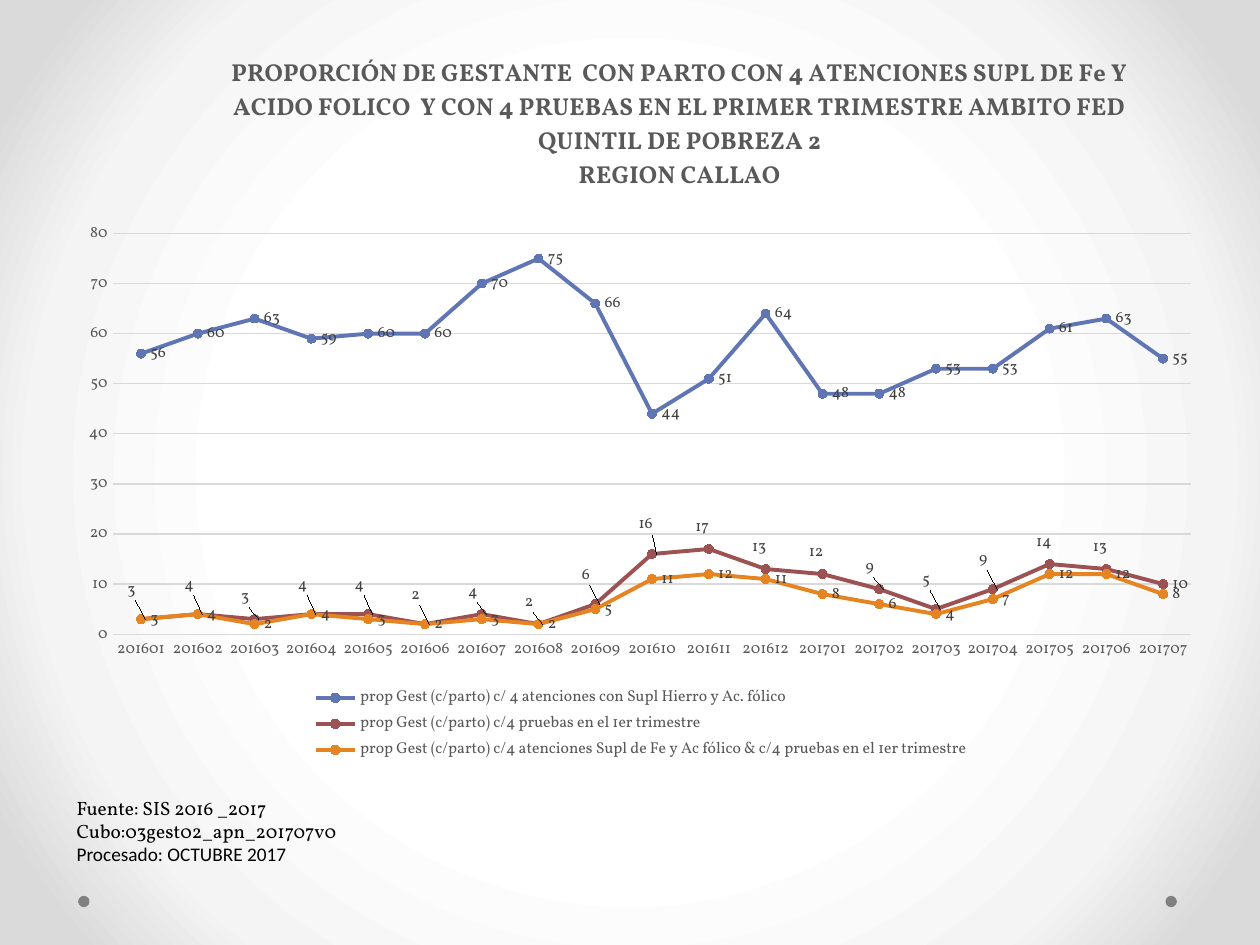
from lxml.etree import SubElement
from pptx import Presentation
from pptx.chart.data import CategoryChartData
from pptx.dml.color import RGBColor
from pptx.enum.chart import (XL_CHART_TYPE, XL_LABEL_POSITION, XL_LEGEND_POSITION,
                             XL_MARKER_STYLE, XL_TICK_MARK)
from pptx.enum.shapes import MSO_SHAPE
from pptx.oxml import parse_xml
from pptx.oxml.ns import nsdecls, qn
from pptx.util import Inches, Pt

TITLE = ("PROPORCIÓN DE GESTANTE  CON PARTO CON 4 ATENCIONES SUPL DE Fe Y "
         "ACIDO FOLICO  Y CON 4 PRUEBAS EN EL PRIMER TRIMESTRE AMBITO FED "
         "QUINTIL DE POBREZA 2\nREGION CALLAO")
MONTHS = [f"{year}{month:02}" for year, last in ((2016, 12), (2017, 7))
          for month in range(1, last + 1)]
SERIES = [
    ("prop Gest (c/parto) c/ 4 atenciones con Supl Hierro y Ac. fólico", "6076B4",
     [56, 60, 63, 59, 60, 60, 70, 75, 66, 44, 51, 64, 48, 48, 53, 53, 61, 63, 55]),
    ("prop Gest (c/parto) c/4 pruebas en el 1er trimestre", "9C5252",
     [3, 4, 3, 4, 4, 2, 4, 2, 6, 16, 17, 13, 12, 9, 5, 9, 14, 13, 10]),
    ("prop Gest (c/parto) c/4 atenciones Supl de Fe y Ac fólico & c/4 pruebas en el 1er trimestre",
     "E68422", [3, 4, 2, 4, 3, 2, 3, 2, 5, 11, 12, 11, 8, 6, 4, 7, 12, 12, 8]),
]
LABEL_RISES = [0.04, 0.04, 0.03, 0.04, 0.04, 0.04, 0.03, 0.03, 0.04,
               0.04, 0.03, 0.03, 0.03, 0.03, 0.04, 0.04, 0.03, 0.03]
SOURCE_LINES = [("Fuente: SIS 2016 _2017", "Vollkorn"),
                ("Cubo:03gest02_apn_201707v0", "Vollkorn"),
                ("Procesado: OCTUBRE 2017", "Calibri")]


def color(value):
    return RGBColor.from_string(value)


def manual_layout(**settings):
    layout = parse_xml(f'<c:layout {nsdecls("c")}/>')
    manual = SubElement(layout, qn("c:manualLayout"))
    for name, value in settings.items():
        SubElement(manual, qn(f"c:{name}")).set("val", str(value))
    return layout


class SlideBuilder:
    """Holds the style and the current slide, placing elements by percent of its size."""

    font_name = "Vollkorn"
    text, label, rule, dot_color = "595959", "404040", "D9D9D9", "808080"

    def __init__(self, presentation):
        self.width, self.height = presentation.slide_width, presentation.slide_height
        self.slide = presentation.slides.add_slide(presentation.slide_layouts[6])

    def place(self, left, top, width, height):
        return (round(left * self.width / 100), round(top * self.height / 100),
                round(width * self.width / 100), round(height * self.height / 100))

    def style(self, font, size, value, name=None, bold=False):
        font.name, font.size, font.bold = name or self.font_name, Pt(size), bold
        font.color.rgb = color(value)

    def background(self, stops):
        fill = self.slide.background.fill
        fill.solid()
        fill.fore_color.rgb = color(stops[0][1])
        solid = self.slide.element.find(".//" + qn("a:solidFill"))
        marks = "".join(f'<a:gs pos="{share * 1000}"><a:srgbClr val="{value}"/></a:gs>'
                        for share, value in stops)
        gradient = parse_xml(
            f'<a:gradFill {nsdecls("a")} rotWithShape="1"><a:gsLst>{marks}</a:gsLst>'
            '<a:path path="circle"><a:fillToRect l="50000" t="50000" r="50000" b="50000"/>'
            '</a:path></a:gradFill>')
        solid.getparent().replace(solid, gradient)

    def dot(self, left, top, diameter):
        x, y, size, _ = self.place(left, top, diameter, diameter)
        shape = self.slide.shapes.add_shape(MSO_SHAPE.OVAL, x, y, size, size)
        shape.shadow.inherit = False
        shape.fill.solid()
        shape.fill.fore_color.rgb = color(self.dot_color)
        shape.line.fill.background()

    def text_box(self, place, lines):
        frame = self.slide.shapes.add_textbox(*self.place(*place)).text_frame
        frame.word_wrap = True
        frame.text = "\n".join(text for text, _ in lines)
        for paragraph, (_, name) in zip(frame.paragraphs, lines):
            self.style(paragraph.font, 11, "000000", name)

    def line_chart(self, place, title, categories, series):
        data = CategoryChartData(number_format="0")
        data.categories = categories
        for name, _, values in series:
            data.add_series(name, values)
        chart = self.slide.shapes.add_chart(
            XL_CHART_TYPE.LINE_MARKERS, *self.place(*place), data).chart
        self.style(chart.font, 10, "000000")
        self.chart_title(chart, title)
        self.axes(chart)
        chart.has_legend = True
        chart.legend.position = XL_LEGEND_POSITION.BOTTOM
        chart.legend.include_in_layout = False
        self.style(chart.legend.font, 9, self.text)
        plot = chart.plots[0]
        plot.vary_by_categories = False
        for line, (_, value, _) in zip(plot.series, series):
            self.series_line(line, value)
        area = chart.element.find(".//" + qn("c:plotArea"))
        for old in area.findall(qn("c:layout")):
            area.remove(old)
        area.insert(0, manual_layout(layoutTarget="inner", xMode="edge", yMode="edge",
                                     x=0.04, y=0.27, w=0.94, h=0.55))
        return chart

    def chart_title(self, chart, title):
        chart.has_title = True
        frame = chart.chart_title.text_frame
        frame.text = title
        for paragraph in frame.paragraphs:
            self.style(paragraph.font, 14, self.text, bold=True)
        element = chart.element.find(".//" + qn("c:title"))
        for old in element.findall(qn("c:layout")):
            element.remove(old)
        element.find(qn("c:tx")).addnext(
            manual_layout(xMode="edge", yMode="edge", x=0.14, y=0.02))

    def axes(self, chart):
        for axis in (chart.category_axis, chart.value_axis):
            axis.major_tick_mark = axis.minor_tick_mark = XL_TICK_MARK.NONE
            self.style(axis.tick_labels.font, 9, self.text)
        value_axis = chart.value_axis
        value_axis.minimum_scale, value_axis.maximum_scale, value_axis.major_unit = 0, 80, 10
        value_axis.tick_labels.number_format = "0"
        value_axis.tick_labels.number_format_is_linked = False
        value_axis.format.line.fill.background()
        for line in (chart.category_axis.format.line, value_axis.major_gridlines.format.line):
            line.color.rgb, line.width = color(self.rule), Pt(0.75)

    def series_line(self, series, value):
        series.smooth = False
        series.format.line.color.rgb, series.format.line.width = color(value), Pt(2.25)
        marker = series.marker
        marker.style, marker.size = XL_MARKER_STYLE.CIRCLE, 5
        marker.format.fill.solid()
        marker.format.fill.fore_color.rgb = color(value)
        marker.format.line.color.rgb = color(value)
        labels = series.data_labels
        labels.show_value, labels.position = True, XL_LABEL_POSITION.RIGHT
        labels.number_format, labels.number_format_is_linked = "0", False
        self.style(labels.font, 9, self.label)

    def raise_labels(self, chart, series, shift, rises):
        for index in range(len(rises)):
            label = series.points[index].data_label
            self.style(label.font, 9, self.label)
            label.position = XL_LABEL_POSITION.RIGHT
        elements = chart.element.findall(".//" + qn("c:dLbl"))
        for element, rise in zip(elements, rises):
            element.find(qn("c:idx")).addnext(manual_layout(x=-shift, y=-rise))


def main():
    presentation = Presentation()
    presentation.slide_width, presentation.slide_height = Inches(10), Inches(7.5)
    builder = SlideBuilder(presentation)
    builder.background([(50, "FFFFFF"), (76, "F4F4F4"), (92, "DADADA")])
    for left in (92.5, 6.2):
        builder.dot(left, 94.8, 0.9)
    builder.text_box((5.1, 83.6, 32.3, 11.2), SOURCE_LINES)
    chart = builder.line_chart((5.3, 3.9, 91.1, 77.1), TITLE, MONTHS, SERIES)
    builder.raise_labels(chart, chart.plots[0].series[1], 0.02, LABEL_RISES)
    presentation.save("out.pptx")


if __name__ == "__main__":
    main()
